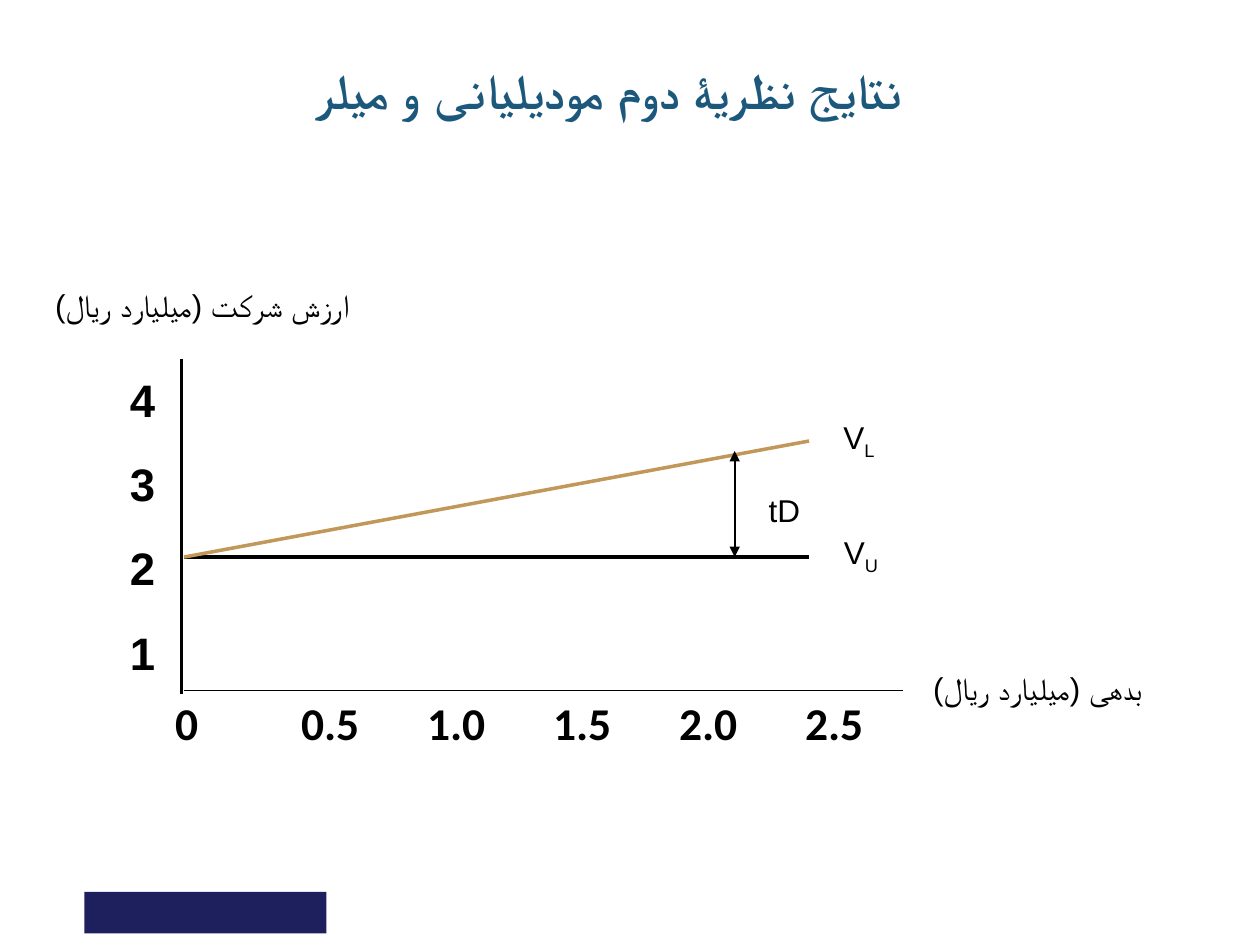
"""Build the slide on firm value against debt, with and without leverage."""
from lxml.etree import SubElement
from pptx import Presentation
from pptx.dml.color import RGBColor
from pptx.enum.shapes import MSO_CONNECTOR as Connector, MSO_SHAPE as Shape
from pptx.enum.text import MSO_ANCHOR as Anchor, PP_ALIGN as Align
from pptx.oxml.ns import qn
from pptx.util import Cm, Pt

BLACK = RGBColor(0x00, 0x00, 0x00)
TEAL = RGBColor(0x1B, 0x58, 0x7C)
NAVY = RGBColor(0x1D, 0x20, 0x5D)
GOLD = RGBColor(0xC1, 0x98, 0x59)

TITLE = {"size": Pt(28), "bold": True, "name": "Arial"}
SCALE = {"size": Pt(26), "bold": True, "name": "Calibri"}
LABEL = {"size": Pt(18), "bold": False, "name": "Arial"}

presentation = Presentation()
presentation.slide_width, presentation.slide_height = Cm(25.4), Cm(19.05)
slide = presentation.slides.add_slide(presentation.slide_layouts[6])


def add_text(box, lines, font, color=BLACK, rtl=True, wrap=True, **formats):
    shape = slide.shapes.add_textbox(*map(Cm, box))
    frame = shape.text_frame
    frame.word_wrap = wrap
    for index, line in enumerate(lines):
        paragraph = frame.paragraphs[0] if index == 0 else frame.add_paragraph()
        for name, value in formats.items():
            if name != "space_before" or index > 0:
                setattr(paragraph, name, value)
        if rtl:
            paragraph._p.get_or_add_pPr().set("rtl", "1")
        for position, part in enumerate(line):
            run = paragraph.add_run()
            run.text = part
            for name, value in font.items():
                setattr(run.font, name, value)
            run.font.color.rgb = color
            properties = run._r.get_or_add_rPr()
            SubElement(properties, qn("a:cs")).set("typeface", "Arial")
            if position > 0:
                properties.set("baseline", "-25000")
    return frame


def add_line(start_x, start_y, end_x, end_y, color, width, arrows=False):
    points = map(Cm, (start_x, start_y, end_x, end_y))
    connector = slide.shapes.add_connector(Connector.STRAIGHT, *points)
    connector.line.color.rgb = color
    connector.line.width = Pt(width)
    if arrows:
        for end in ("a:headEnd", "a:tailEnd"):
            SubElement(connector.line._get_or_add_ln(), qn(end)).set("type", "triangle")
    SubElement(connector._element.spPr, qn("a:effectLst"))


bar = slide.shapes.add_shape(Shape.RECTANGLE, Cm(1.7), Cm(17.98), Cm(4.88), Cm(0.84))
bar.shadow.inherit = False
bar.fill.solid()
bar.fill.fore_color.rgb = NAVY
bar.line.fill.background()

title = add_text((0.84, 0.64, 22.86, 2.34), [["نتایج نظریۀ دوم مودیلیانی و میلر"]],
                 TITLE, TEAL, alignment=Align.CENTER)
title.vertical_anchor = Anchor.MIDDLE

for box, caption in [
    ((-0.43, 5.72, 9.02, 0.97), "ارزش شرکت (میلیارد ریال)"),
    ((17.35, 13.44, 7.14, 0.97), "بدهی (میلیارد ریال)"),
]:
    add_text(box, [[caption]], LABEL, alignment=Align.CENTER, line_spacing=0.9)

add_text((1.42, 7.37, 1.96, 6.63), [[str(value)] for value in range(4, 0, -1)],
         SCALE, alignment=Align.RIGHT, space_before=Pt(17))

debts = ["0", "0.5", "1.0", "1.5", "2.0", "2.5"]
debt_scale = add_text((3.28, 13.89, 20.29, 1.35), [["\t".join(debts)]],
                      SCALE, rtl=False, alignment=Align.LEFT)
tabs = SubElement(debt_scale.paragraphs[0]._p.get_or_add_pPr(), qn("a:tabLst"))
for step in range(1, len(debts)):
    tab = SubElement(tabs, qn("a:tab"))
    tab.set("pos", str(Cm(2.54 * step)))
    tab.set("algn", "l")

origin_x, base_value, line_end = 3.71, 11.23, 16.31
add_line(3.66, 7.24, 3.66, 14, BLACK, 2)
add_line(origin_x, 13.92, 18.21, 13.92, BLACK, 1)
add_line(origin_x, base_value, line_end, base_value, BLACK, 2)
add_line(origin_x, base_value, line_end, 8.89, GOLD, 2)
add_line(14.81, 9.09, 14.81, base_value, BLACK, 1, arrows=True)

for left, top, width, parts in [
    (16.71, 10.62, 1.24, ["V", "U"]),
    (16.71, 8.31, 1.17, ["V", "L"]),
    (15.24, 9.78, 1.14, ["tD"]),
]:
    add_text((left, top, width, 1.02), [parts], LABEL, wrap=False, alignment=Align.RIGHT)

presentation.save("out.pptx")
